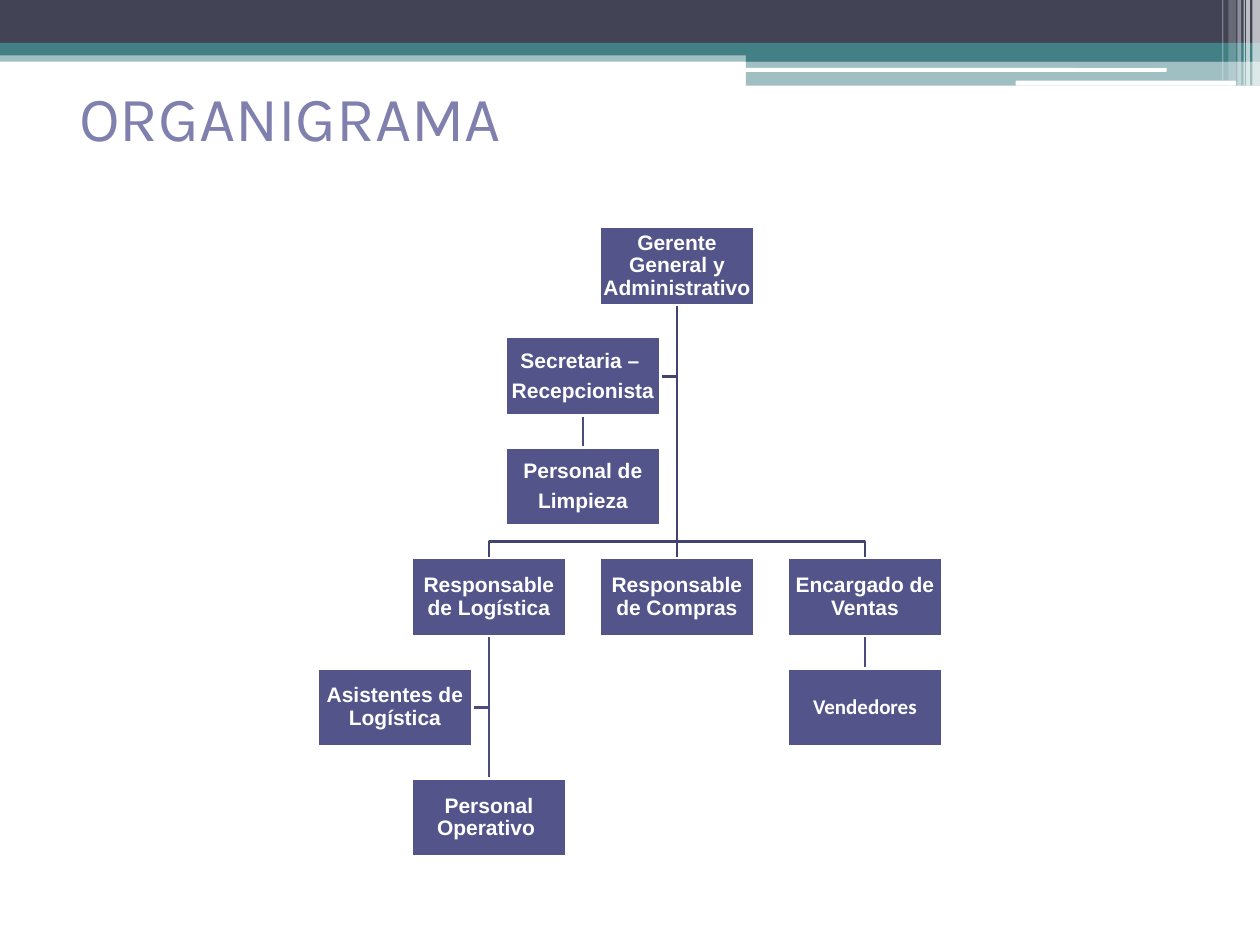
from dataclasses import dataclass

import lxml.etree
import pptx
import pptx.dml.color
import pptx.enum.shapes
import pptx.enum.text
import pptx.oxml.ns
import pptx.util

SHAPES = pptx.enum.shapes.MSO_SHAPE
ALIGN = pptx.enum.text.PP_ALIGN
ANCHOR = pptx.enum.text.MSO_ANCHOR

# The slide is a grid of 100 columns by 75 rows of square cells
COLUMNS, ROWS = 100, 75
CELL = pptx.util.Inches(0.1)


@dataclass(frozen=True)
class Theme:
    white: str = "FFFFFF"
    dark: str = "424456"
    teal: str = "438086"
    title: str = "8080AE"
    node: str = "53548A"
    trunk: str = "42436F"
    branch: str = "4B4C7D"
    title_font: str = "Karla"
    node_font: str = "Arial"
    staff_font: str = "Calibri"
    title_size: float = 36
    node_size: float = 12
    line_width: float = 1.5


THEME = Theme()


@dataclass(frozen=True)
class Box:
    left: float
    top: float
    width: float
    height: float

    @property
    def center(self):
        return self.left + self.width / 2

    @property
    def middle(self):
        return self.top + self.height / 2

    @property
    def bottom(self):
        return self.top + self.height

    def inner(self, left, top, width, height):
        return Box(self.left + left, self.top + top, width, height)

    def lengths(self):
        return [cells(v) for v in (self.left, self.top, self.width, self.height)]


def cells(count):
    return pptx.util.Emu(round(count * CELL))


def rgb(value):
    return pptx.dml.color.RGBColor.from_string(value)


def add_block(page, box, color, opacity=100, kind=SHAPES.RECTANGLE):
    shape = page.shapes.add_shape(kind, *box.lengths())
    shape.shadow.inherit = False
    shape.fill.solid()
    shape.fill.fore_color.rgb = rgb(color)
    shape.line.fill.background()
    if opacity < 100:
        solid = shape.fill._xPr.find(pptx.oxml.ns.qn("a:solidFill"))
        alpha = lxml.etree.SubElement(solid[0], pptx.oxml.ns.qn("a:alpha"))
        alpha.set("val", str(opacity * 1000))
    return shape


def style_text(para, font, size, color, bold=False):
    for span in para.runs:
        span.font.name = font
        span.font.size = pptx.util.Pt(size)
        span.font.color.rgb = rgb(color)
        span.font.bold = bold


def draw_header(page, box):
    full, half = box.width, 40.8
    start = full - half
    # Bands: left, top, width, height, colour, opacity
    bands = [
        (0, 4, full, 0.9, THEME.teal, 50),
        (0, 0, full, 3.4, THEME.dark, 100),
        (0, 3.4, full, 1, THEME.teal, 100),
        (start, 3.9, half, 1, THEME.teal, 100),
        (start, 4.8, half, 2, THEME.teal, 50),
    ]
    for *place, color, opacity in bands:
        add_block(page, box.inner(*place), color, opacity)

    # Rounded white rules
    for place in [(59.1, 5.4, 33.5, 0.3), (80.6, 6.4, 17.5, 0.4)]:
        add_block(page, box.inner(*place), THEME.white, kind=SHAPES.ROUNDED_RECTANGLE)

    # Vertical stripes: left, width, height, opacity
    stripes = [
        (99.4, 0.6, 6.8, 65), (98.9, 0.3, 6.8, 65), (98.7, 0.1, 6.8, 60),
        (98.2, 0.3, 6.8, 40), (97.5, 0.6, 6.4, 20), (97, 0.1, 6.4, 30),
    ]
    for left, width, height, opacity in stripes:
        add_block(page, box.inner(left, 0, width, height), THEME.white, opacity)


def draw_title(page, box):
    frame = page.shapes.add_textbox(*box.lengths()).text_frame
    frame.word_wrap = True
    frame.margin_left = frame.margin_right = 0
    frame.vertical_anchor = ANCHOR.MIDDLE
    frame.text = "ORGANIGRAMA"
    style_text(frame.paragraphs[0], THEME.title_font, THEME.title_size, THEME.title)


# Position: text, half-column, row
POSITIONS = {
    "manager": ("Gerente General y Administrativo ", 3, 0),
    "logistics": ("Responsable de Logística", 1, 3),
    "operators": ("Personal Operativo ", 1, 5),
    "assistants": ("Asistentes de Logística", 0, 4),
    "purchasing": ("Responsable de Compras", 3, 3),
    "sales": ("Encargado de Ventas", 5, 3),
    "sellers": ("Vendedores", 5, 4),
    "secretary": ("Secretaria – \nRecepcionista", 2, 1),
    "cleaning": ("Personal de\nLimpieza", 2, 2),
}

# Link: upper position, lower position, colour
LINKS = [
    ("secretary", "cleaning", THEME.branch),
    ("manager", "secretary", THEME.trunk),
    ("sales", "sellers", THEME.branch),
    ("manager", "sales", THEME.trunk),
    ("manager", "purchasing", THEME.trunk),
    ("logistics", "assistants", THEME.branch),
    ("logistics", "operators", THEME.branch),
    ("manager", "logistics", THEME.trunk),
]


def draw_link(page, upper, lower, elbow, color):
    start = (upper.center, upper.bottom)
    end = (lower.center, lower.top)
    if upper.left == lower.left:
        ends = [cells(v) for v in (*start, *end)]
        link = page.shapes.add_connector(pptx.enum.shapes.MSO_CONNECTOR.STRAIGHT, *ends)
        effects = pptx.oxml.ns.qn("a:effectLst")
        lxml.etree.SubElement(link._element.spPr, effects)
    else:
        # An assistant hangs from the side, a subordinate from above
        if upper.left > lower.left + lower.width / 2 and elbow is None:
            corners = [(upper.center, lower.middle), (lower.left + lower.width, lower.middle)]
        else:
            corners = [(upper.center, elbow), (lower.center, elbow), end]
        builder = page.shapes.build_freeform(cells(start[0]), cells(start[1]))
        builder.add_line_segments([(cells(x), cells(y)) for x, y in corners], close=False)
        link = builder.convert_to_shape()
        link.shadow.inherit = False
        link.fill.background()
    link.line.color.rgb = rgb(color)
    link.line.width = pptx.util.Pt(THEME.line_width)


def draw_node(page, box, text, font):
    node = add_block(page, box, THEME.node)
    node.line.color.rgb = rgb(THEME.white)
    node.line.width = pptx.util.Pt(THEME.line_width)
    frame = node.text_frame
    frame.word_wrap = True
    frame.vertical_anchor = ANCHOR.MIDDLE
    frame.margin_left = frame.margin_right = cells(0.1)
    frame.margin_top = frame.margin_bottom = cells(0.1)
    frame.text = text
    for para in frame.paragraphs:
        para.alignment = ALIGN.CENTER
        para.line_spacing = 0.9
        para.space_after = pptx.util.Pt(0.35 * THEME.node_size)
        style_text(para, font, THEME.node_size, THEME.white, bold=True)


def draw_chart(page, box):
    width, height = 12.3, 6.2
    step_x, step_y = (box.width - width) / 5, (box.height - height) / 5
    places = {
        name: box.inner(column * step_x, row * step_y, width, height)
        for name, (text, column, row) in POSITIONS.items()
    }
    # Links lie behind the nodes
    for upper, lower, color in LINKS:
        aside = lower in ("secretary", "assistants")
        elbow = None if aside else places[lower].top - (step_y - height) / 2
        draw_link(page, places[upper], places[lower], elbow, color)
    for name, (text, column, row) in POSITIONS.items():
        font = THEME.staff_font if name == "sellers" else THEME.node_font
        draw_node(page, places[name], text, font)


def main():
    deck = pptx.Presentation()
    deck.slide_width, deck.slide_height = cells(COLUMNS), cells(ROWS)
    page = deck.slides.add_slide(deck.slide_layouts[6])
    draw_header(page, Box(0, 0, COLUMNS, 6.8))
    draw_title(page, Box(6.3, 5.7, 83.7, 7))
    draw_chart(page, Box(25.2, 18, 49.6, 50))
    deck.save("out.pptx")


if __name__ == "__main__":
    main()
